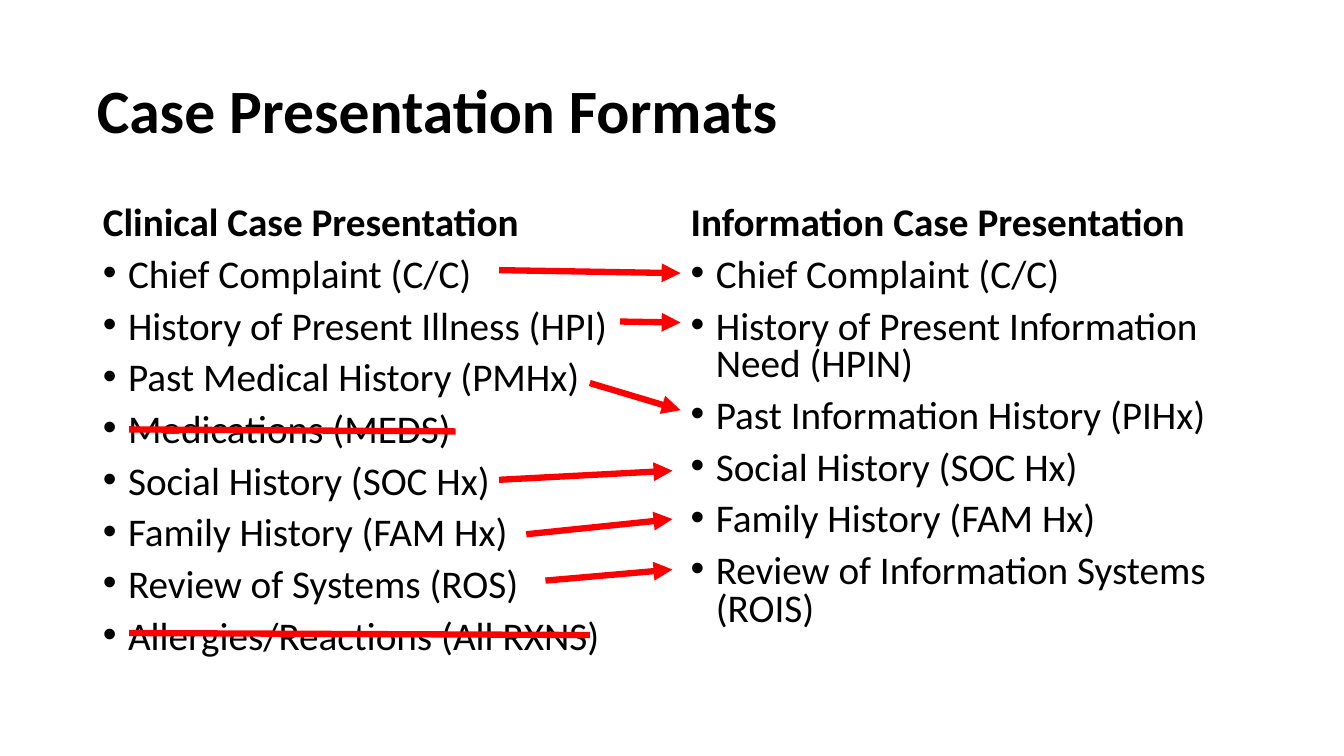
from dataclasses import dataclass

from lxml.etree import SubElement as Sub
from pptx import Presentation
from pptx.dml.color import RGBColor
from pptx.enum.shapes import MSO_CONNECTOR as Conn
from pptx.enum.text import MSO_ANCHOR as Anchor, MSO_AUTO_SIZE as Auto, PP_ALIGN as Align
from pptx.oxml.ns import qn
from pptx.util import Emu, Pt

PX = 9144  # 100 px to the inch
BLACK, RED = "000000", "FF0000"


@dataclass
class Box:
    x: int
    y: int
    w: int
    h: int


@dataclass
class Column:
    slot: int
    box: Box
    head: str
    items: list[str]


@dataclass
class Line:
    x1: int
    y1: int
    x2: int
    y2: int
    arrow: bool = True


COLUMNS = [
    Column(1, Box(92, 200, 567, 476), "Clinical Case Presentation", [
        "Chief Complaint (C/C)",
        "History of Present Illness (HPI)",
        "Past Medical History (PMHx)",
        "Medications (MEDS)",
        "Social History (SOC Hx)",
        "Family History (FAM Hx)",
        "Review of Systems (ROS)",
        "Allergies/Reactions (All RXNS)",
    ]),
    Column(2, Box(675, 200, 567, 476), "Information Case Presentation", [
        "Chief Complaint (C/C)",
        "History of Present Information Need (HPIN)",
        "Past Information History (PIHx)",
        "Social History (SOC Hx)",
        "Family History (FAM Hx)",
        "Review of Information Systems (ROIS)",
    ]),
]

LINES = [
    # Arrows between matching items
    Line(495, 268, 675, 271),
    Line(615, 319, 675, 320),
    Line(585, 380, 675, 407),
    Line(495, 476, 667, 467),
    Line(522, 530, 667, 515),
    Line(541, 576, 667, 565),
    # Items struck out
    Line(128, 426, 452, 428, arrow=False),
    Line(128, 628, 585, 630, arrow=False),
]


def px(n: int) -> Emu:
    return Emu(n * PX)


def color(code: str) -> RGBColor:
    return RGBColor.from_string(code)


def place(shape, box: Box, anchor: Anchor):
    shape.left, shape.top = px(box.x), px(box.y)
    shape.width, shape.height = px(box.w), px(box.h)
    frame = shape.text_frame
    frame.word_wrap = True
    frame.auto_size = Auto.NONE
    frame.vertical_anchor = anchor
    return frame


def style(para, size: int, bold: bool, space: float) -> None:
    para.alignment = Align.LEFT
    para.line_spacing = space
    font = para.font
    font.name, font.size, font.bold = "Calibri", Pt(size), bold
    font.color.rgb = color(BLACK)


def add_title(slide, text: str, box: Box) -> None:
    frame = place(slide.shapes.title, box, Anchor.MIDDLE)
    frame.text = text
    style(frame.paragraphs[0], 44, True, 0.9)


def add_column(slide, col: Column) -> None:
    frame = place(slide.placeholders[col.slot], col.box, Anchor.TOP)
    frame.text = "\n".join([col.head, *col.items])
    for i, para in enumerate(frame.paragraphs):
        para.space_before = Pt(10 if i else 0)
        props = para._p.get_or_add_pPr()
        dent = px(25) if i else 0
        props.set("marL", str(dent))
        props.set("indent", str(-dent))
        if i:
            Sub(props, qn("a:buFont"), typeface="Arial")
            Sub(props, qn("a:buChar"), char="•")
        else:
            Sub(props, qn("a:buNone"))
        style(para, 28, i == 0, 0.8)


def add_line(slide, line: Line) -> None:
    ends = [px(n) for n in (line.x1, line.y1, line.x2, line.y2)]
    conn = slide.shapes.add_connector(Conn.STRAIGHT, *ends)
    conn.line.color.rgb = color(RED)
    conn.line.width = Pt(4.5)
    if line.arrow:
        Sub(conn.line._get_or_add_ln(), qn("a:tailEnd"), type="triangle")
    Sub(conn._element.spPr, qn("a:effectLst"))


def main() -> None:
    deck = Presentation()
    deck.slide_width, deck.slide_height = px(1333), px(750)
    slide = deck.slides.add_slide(deck.slide_layouts[3])
    add_title(slide, "Case Presentation Formats", Box(86, 40, 1156, 145))
    for col in COLUMNS:
        add_column(slide, col)
    for line in LINES:
        add_line(slide, line)
    deck.save("out.pptx")


if __name__ == "__main__":
    main()
